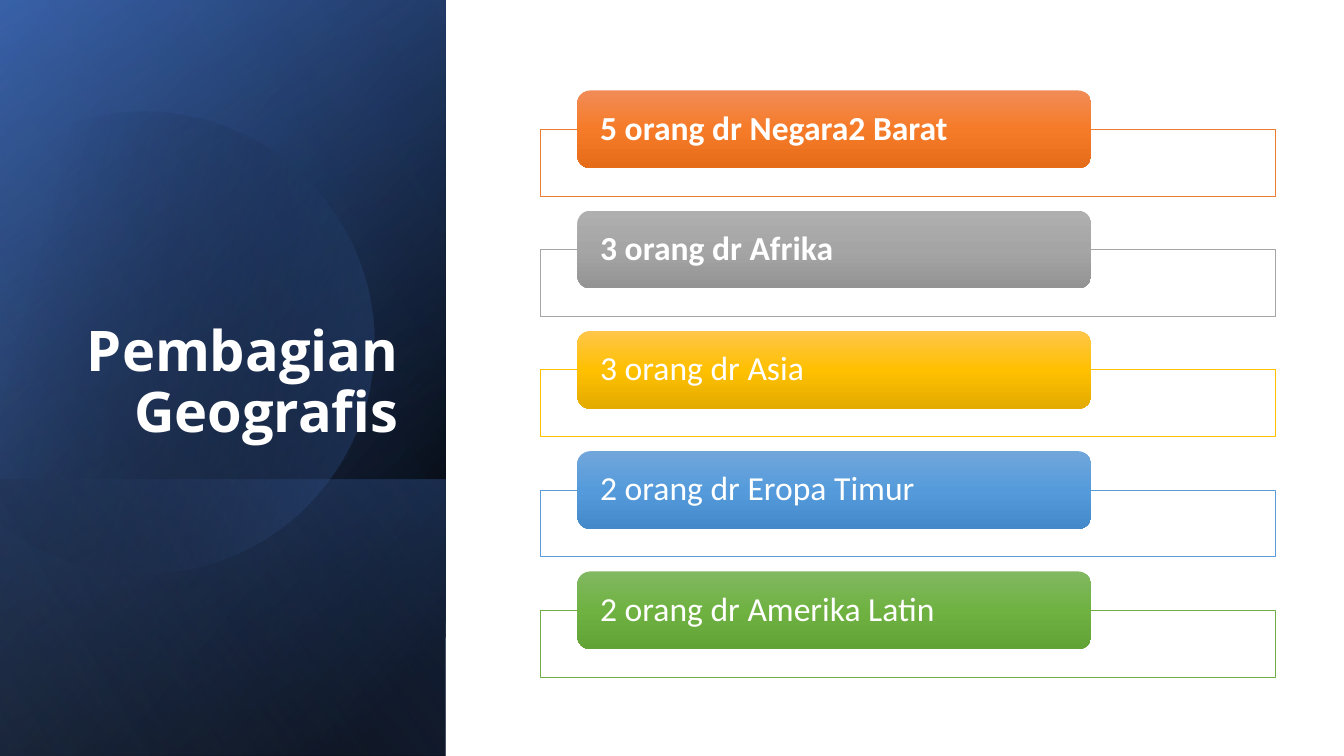
from math import cos, radians, sin

from lxml import etree
from pptx import Presentation
from pptx.dml.color import RGBColor
from pptx.enum.shapes import MSO_SHAPE as Preset
from pptx.enum.text import MSO_ANCHOR as Anchor, PP_ALIGN as Align
from pptx.oxml.ns import qn
from pptx.util import Cm, Pt

WHITE = RGBColor(0xFF, 0xFF, 0xFF)
BLACK = RGBColor(0x00, 0x00, 0x00)
NAVY = RGBColor(0x2F, 0x55, 0x97)
BLUE = RGBColor(0x44, 0x72, 0xC4)
PALE_BLUE = RGBColor(0x8F, 0xAA, 0xDC)
ORANGE = RGBColor(0xED, 0x7D, 0x31)
ORANGE_SHADES = RGBColor(0xF1, 0x8C, 0x57), RGBColor(0xF6, 0x7B, 0x28), RGBColor(0xE5, 0x6C, 0x19)
GRAY = RGBColor(0xA5, 0xA5, 0xA5)
GRAY_SHADES = RGBColor(0xAF, 0xAF, 0xAF), GRAY, RGBColor(0x93, 0x93, 0x93)
GOLD = RGBColor(0xFF, 0xC0, 0x00)
GOLD_SHADES = RGBColor(0xFF, 0xC6, 0x4B), GOLD, RGBColor(0xE3, 0xAB, 0x00)
SKY = RGBColor(0x5B, 0x9B, 0xD5)
SKY_SHADES = RGBColor(0x71, 0xA6, 0xDB), RGBColor(0x55, 0x9B, 0xDB), RGBColor(0x44, 0x8A, 0xCA)
GREEN = RGBColor(0x70, 0xAD, 0x47)
GREEN_SHADES = RGBColor(0x81, 0xB8, 0x61), RGBColor(0x6F, 0xB2, 0x42), RGBColor(0x62, 0xA3, 0x36)


def paint_gradient(shape, angle, stops):
    """Fill a shape, without outline or shadow, from (position %, colour, opacity %) stops."""
    shape.shadow.inherit = False
    shape.line.fill.background()
    shape.fill.background()
    no_fill = shape._element.spPr.find(qn("a:noFill"))
    gradient = etree.Element(qn("a:gradFill"), rotWithShape="1")
    stop_list = etree.SubElement(gradient, qn("a:gsLst"))
    for position, color, opacity in stops:
        stop = etree.SubElement(stop_list, qn("a:gs"), pos=str(position * 1000))
        tone = etree.SubElement(stop, qn("a:srgbClr"), val=str(color))
        if opacity < 100:
            etree.SubElement(tone, qn("a:alpha"), val=str(opacity * 1000))
    etree.SubElement(gradient, qn("a:lin"), ang=str(angle * 60000), scaled="0")
    no_fill.getparent().replace(no_fill, gradient)


def write_line(frame, text, font_name, size, bold, align):
    paragraph = frame.paragraphs[0]
    paragraph.alignment = align
    paragraph.line_spacing = 0.9
    run = paragraph.add_run()
    run.text = text
    run.font.name = font_name
    run.font.size = Pt(size)
    run.font.bold = bold
    run.font.color.rgb = WHITE


presentation = Presentation()
presentation.slide_width = Cm(33.87)
presentation.slide_height = Cm(19.05)
slide = presentation.slides.add_slide(presentation.slide_layouts[6])
shapes = slide.shapes

# Side panel: stacked gradients turned by 90 degrees, with a disc below the top layer
PANEL_WIDTH = 11.23
FULL, LOWER = (9.52, 19.05), (15.57, 6.96)  # vertical centre and height
panel_layers = [
    (FULL, 50, [(8, BLACK, 100), (100, NAVY, 100)]),
    (FULL, 30, [(0, BLACK, 0), (99, BLUE, 46)]),
    (LOWER, 130, [(2, BLUE, 29), (100, BLACK, 30)]),
    (FULL, 120, [(0, BLACK, 0), (99, PALE_BLUE, 11)]),
]
for index, ((center, height), angle, stops) in enumerate(panel_layers):
    if index == 3:
        center_x, center_y, radius = 3.61, 8.52, 5.82
        start, end, steps = -117.3, 149.5, 90
        turns = [radians(start + (end - start) * step / steps) for step in range(steps + 1)]
        outline = [(Cm(center_x + radius * cos(turn)), Cm(center_y + radius * sin(turn)))
                   for turn in turns]
        builder = shapes.build_freeform(*outline[0])
        builder.add_line_segments(outline[1:], close=True)
        disc = builder.convert_to_shape()
        disc.rotation = 343.9
        paint_gradient(disc, 30, [(29, BLACK, 0), (100, BLUE, 43)])
    layer = shapes.add_shape(Preset.RECTANGLE, Cm((PANEL_WIDTH - height) / 2),
                             Cm(center - PANEL_WIDTH / 2), Cm(height), Cm(PANEL_WIDTH))
    layer.rotation = 90
    layer._element.spPr.xfrm.set("flipH", "1")
    paint_gradient(layer, angle, stops)

title = shapes.add_textbox(Cm(1.63), Cm(4.67), Cm(8.66), Cm(6.65)).text_frame
title.word_wrap = True
title.vertical_anchor = Anchor.BOTTOM
write_line(title, "Pembagian Geografis", "Open Sans", 40, True, Align.RIGHT)

# List of regions: a framed bar with a rounded label on its upper edge
regions = [
    ("5 orang dr Negara2 Barat", True, ORANGE, ORANGE_SHADES),
    ("3 orang dr Afrika", True, GRAY, GRAY_SHADES),
    ("3 orang dr Asia", False, GOLD, GOLD_SHADES),
    ("2 orang dr Eropa Timur", False, SKY, SKY_SHADES),
    ("2 orang dr Amerika Latin", False, GREEN, GREEN_SHADES),
]
ROW_TOP, ROW_PITCH = 2.28, 3.03
for row, (text, bold, color, shades) in enumerate(regions):
    top = ROW_TOP + row * ROW_PITCH
    bar = shapes.add_shape(Preset.RECTANGLE, Cm(13.61), Cm(top + 0.98), Cm(18.52), Cm(1.68))
    bar.shadow.inherit = False
    bar.fill.solid()
    bar.fill.fore_color.rgb = WHITE
    bar.line.color.rgb = color
    bar.line.width = Pt(0.5)

    label = shapes.add_shape(Preset.ROUNDED_RECTANGLE, Cm(14.55), Cm(top), Cm(12.95), Cm(1.96))
    paint_gradient(label, 90, [(place, shade, 100) for place, shade in zip((0, 50, 100), shades)])
    frame = label.text_frame
    frame.word_wrap = True
    frame.vertical_anchor = Anchor.MIDDLE
    frame.margin_left = frame.margin_right = Cm(0.48)
    frame.margin_top = frame.margin_bottom = Cm(0)
    write_line(frame, text, "Calibri", 24, bold, Align.LEFT)

presentation.save("out.pptx")
